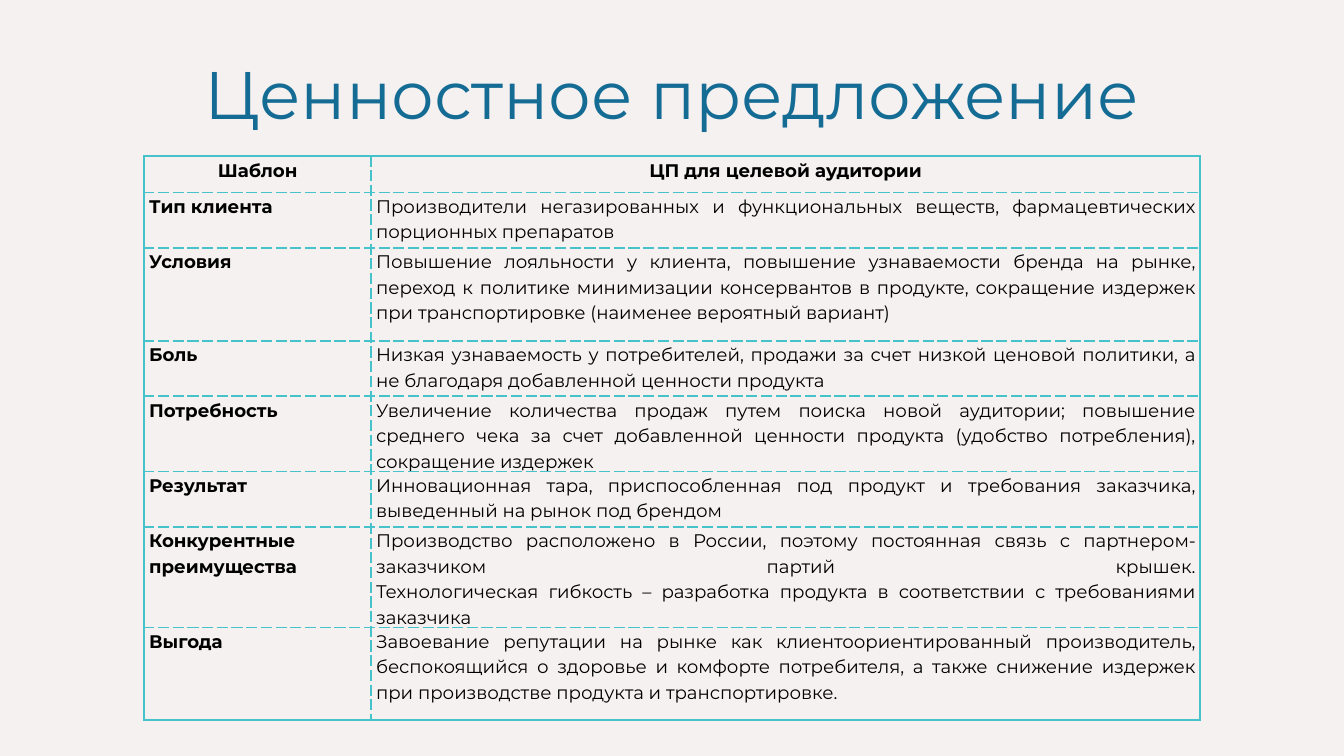
from lxml.etree import SubElement
from pptx import Presentation
from pptx.dml.color import RGBColor
from pptx.enum.text import MSO_ANCHOR as Anchor, PP_ALIGN as Align
from pptx.oxml.ns import qn
from pptx.util import Inches, Pt

ROWS = [
    ("Шаблон", "ЦП для целевой аудитории", 0.36),
    ("Тип клиента", "Производители негазированных и функциональных веществ, "
     "фармацевтических порционных препаратов", 0.55),
    ("Условия", "Повышение лояльности у клиента, повышение узнаваемости бренда "
     "на рынке, переход к политике минимизации консервантов в продукте, "
     "сокращение издержек при транспортировке (наименее вероятный вариант)", 0.92),
    ("Боль", "Низкая узнаваемость у потребителей, продажи за счет низкой "
     "ценовой политики, а не благодаря добавленной ценности продукта", 0.55),
    ("Потребность", "Увеличение количества продаж путем поиска новой аудитории; "
     "повышение среднего чека за счет добавленной ценности продукта "
     "(удобство потребления), сокращение издержек", 0.74),
    ("Результат", "Инновационная тара, приспособленная под продукт и требования "
     "заказчика, выведенный на рынок под брендом", 0.55),
    ("Конкурентные преимущества", "Производство расположено в России, поэтому "
     "постоянная связь с партнером-заказчиком партий крышек.\v"
     "Технологическая гибкость – разработка продукта в соответствии "
     "с требованиями заказчика", 0.92),
    ("Выгода", "Завоевание репутации на рынке как клиентоориентированный "
     "производитель, беспокоящийся о здоровье и комфорте потребителя, а также "
     "снижение издержек при производстве продукта и транспортировке.", 0.92),
]
WIDTHS = [2.25, 8.22]


def color(code):
    return RGBColor.from_string(code)


class Deck:
    face = "Montserrat"
    paper, ink, blue, teal = "F6F1F1", "000000", "146C94", "46C2CB"

    def __init__(self):
        self.prs = Presentation()
        self.prs.slide_width = Inches(13.33)
        self.prs.slide_height = Inches(7.5)
        self.slide = self.prs.slides.add_slide(self.prs.slide_layouts[6])
        fill = self.slide.background.fill
        fill.solid()
        fill.fore_color.rgb = color(self.paper)

    def label(self, frame, text, size, shade, align, space, bold=False):
        frame.word_wrap = True
        frame.text = text
        para = frame.paragraphs[0]
        para.alignment = align
        para.line_spacing = space
        font = para.font
        font.name = self.face
        font.size = Pt(size)
        font.bold = bold
        font.color.rgb = color(shade)

    def title(self, text, *box):
        frame = self.slide.shapes.add_textbox(*map(Inches, box)).text_frame
        frame.vertical_anchor = Anchor.BOTTOM
        self.label(frame, text, 48, self.blue, Align.CENTER, 0.9)

    def edge(self, cell, side, solid):
        line = SubElement(cell._tc.get_or_add_tcPr(), qn(f"a:ln{side}"), w=str(Pt(1.5)))
        fill = SubElement(line, qn("a:solidFill"))
        SubElement(fill, qn("a:srgbClr"), val=self.teal)
        SubElement(line, qn("a:prstDash"), val="solid" if solid else "dash")

    def cell(self, cell, text, head, bold, outer):
        cell.margin_left = cell.margin_right = Inches(0.05)
        cell.margin_top = cell.margin_bottom = 0
        align = Align.CENTER if head else Align.JUSTIFY
        self.label(cell.text_frame, text, 13, self.ink, align, 1.15, bold)
        for side in "LRTB":
            self.edge(cell, side, outer[side])
        cell.fill.background()

    def table(self, rows, widths, left, top):
        high = sum(row[-1] for row in rows)
        box = map(Inches, (left, top, sum(widths), high))
        table = self.slide.shapes.add_table(len(rows), len(widths), *box).table
        table.first_row = table.horz_banding = False
        for col, width in zip(table.columns, widths):
            col.width = Inches(width)
        for r, (*texts, height) in enumerate(rows):
            table.rows[r].height = Inches(height)
            for c, text in enumerate(texts):
                outer = {"L": c == 0, "R": c == len(widths) - 1,
                         "T": r == 0, "B": r == len(rows) - 1}
                self.cell(table.cell(r, c), text, r == 0, r == 0 or c == 0, outer)


def main():
    deck = Deck()
    deck.title("Ценностное предложение", 0.78, 0.37, 11.77, 1.01)
    deck.table(ROWS, WIDTHS, 1.43, 1.55)
    deck.prs.save("out.pptx")


if __name__ == "__main__":
    main()
